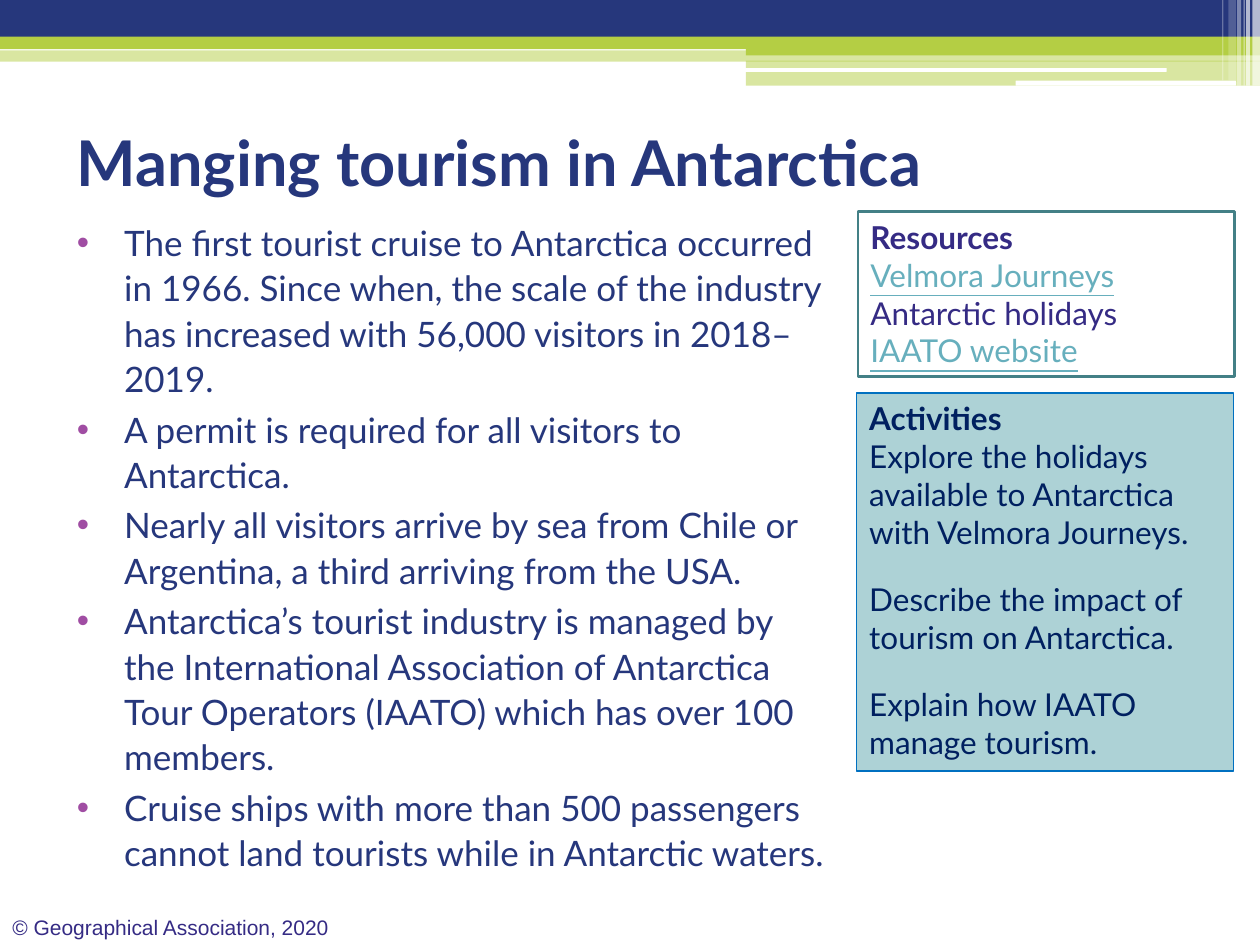
from typing import NamedTuple

from lxml import etree
from pptx import Presentation
from pptx.dml.color import RGBColor
from pptx.enum.shapes import MSO_SHAPE
from pptx.enum.text import MSO_ANCHOR, MSO_AUTO_SIZE, PP_ALIGN
from pptx.oxml.ns import qn
from pptx.util import Pt

RECT, ROUND = MSO_SHAPE.RECTANGLE, MSO_SHAPE.ROUNDED_RECTANGLE
TOP, MIDDLE = MSO_ANCHOR.TOP, MSO_ANCHOR.MIDDLE
LEFT, FIXED = PP_ALIGN.LEFT, MSO_AUTO_SIZE.NONE
NAVY, LIME, WHITE = "26377C", "B4CE44", "FFFFFF"
PURPLE, TEAL, INK, PLUM = "352B84", "67AFBD", "002060", "A04DA3"


class Box(NamedTuple):
    left: float
    top: float
    width: float
    height: float


class Bar(NamedTuple):
    box: Box
    color: str
    alpha: int = 100
    kind: int = RECT


class Run(NamedTuple):
    text: str
    color: str
    bold: bool = False
    line: bool = False


class Para(NamedTuple):
    runs: list[Run]
    gap: float = 0


class Panel(NamedTuple):
    box: Box
    fill: str | None
    edge: str
    weight: float
    paras: list[Para]


BARS = [
    Bar(Box(0, 28.8, 720, 6.5), LIME, 50),
    Bar(Box(0, 0, 720, 24.5), NAVY),
    Bar(Box(0, 20.9, 720, 7.2), LIME),
    Bar(Box(426.2, 24.5, 293.8, 7.2), LIME),
    Bar(Box(426.2, 34.6, 293.8, 14.4), LIME, 50),
    Bar(Box(425.5, 38.9, 241.2, 2.2), WHITE, kind=ROUND),
    Bar(Box(580.3, 46.1, 126, 2.9), WHITE, kind=ROUND),
]
# left, width, height, opacity of the pale strips at the right edge
STRIPS = [(715.7, 4.3, 49, 65), (712.1, 2.2, 49, 65), (710.6, 0.7, 49, 60),
          (707, 2.2, 49, 40), (702, 4.3, 46, 20), (698.4, 0.7, 46, 30)]
BARS += [Bar(Box(x, 0, w, h), WHITE, a) for x, w, h, a in STRIPS]

POINTS = [
    "The first tourist cruise to Antarctica occurred in 1966. Since when, the scale of "
    "the industry has increased with 56,000 visitors in 2018–2019.",
    "A permit is required for all visitors to Antarctica.",
    "Nearly all visitors arrive by sea from Chile or Argentina, a third arriving from the USA.",
    "Antarctica’s tourist industry is managed by the International Association of "
    "Antarctica Tour Operators (IAATO) which has over 100 members.",
    "Cruise ships with more than 500 passengers cannot land tourists while in Antarctic waters.",
]

PANELS = [
    Panel(Box(490.3, 121, 215.3, 94.3), None, "438086", 1.5, [
        Para([Run("Resources", PURPLE, bold=True)]),
        Para([Run("Velmora Journeys", TEAL, line=True), Run(" Antarctic holidays", PURPLE)]),
        Para([Run("IAATO website", TEAL, line=True)]),
    ]),
    Panel(Box(489.6, 224.6, 215.3, 216), "ADD2D6", "0070C0", 0.75, [
        Para([Run("Activities", INK, bold=True)]),
        Para([Run("Explore the holidays available to Antarctica with Velmora Journeys.", INK)]),
        Para([Run("Describe the impact of tourism on Antarctica.", INK)], 16.8),
        Para([Run("Explain how IAATO manage tourism.", INK)], 16.8),
    ]),
]


def rgb(code: str) -> RGBColor:
    return RGBColor.from_string(code)


def place(shape, box: Box) -> None:
    shape.left, shape.top, shape.width, shape.height = map(Pt, box)


def add_run(para, run: Run, size: float, face: str = "Lato") -> None:
    item = para.add_run()
    item.text = run.text
    font = item.font
    font.name, font.size, font.bold, font.underline = face, Pt(size), run.bold, run.line
    font.color.rgb = rgb(run.color)


def set_frame(frame, anchor) -> None:
    frame.word_wrap = True
    frame.auto_size = FIXED
    frame.vertical_anchor = anchor


def write(frame, paras: list[Para], size: float, face: str = "Lato") -> None:
    for num, item in enumerate(paras):
        para = frame.add_paragraph() if num else frame.paragraphs[0]
        para.alignment = LEFT
        para.space_before = Pt(item.gap)
        for run in item.runs:
            add_run(para, run, size, face)


def add_bar(slide, bar: Bar) -> None:
    shape = slide.shapes.add_shape(bar.kind, *map(Pt, bar.box))
    shape.shadow.inherit = False
    shape.line.fill.background()
    shape.fill.solid()
    shape.fill.fore_color.rgb = rgb(bar.color)
    if bar.alpha < 100:
        tint = shape.fill._xPr.find(".//" + qn("a:srgbClr"))
        etree.SubElement(tint, qn("a:alpha"), val=str(bar.alpha * 1000))


def add_panel(slide, panel: Panel) -> None:
    shape = slide.shapes.add_shape(RECT, *map(Pt, panel.box))
    shape.shadow.inherit = False
    if panel.fill:
        shape.fill.solid()
        shape.fill.fore_color.rgb = rgb(panel.fill)
    else:
        shape.fill.background()
    shape.line.color.rgb = rgb(panel.edge)
    shape.line.width = Pt(panel.weight)
    set_frame(shape.text_frame, TOP)
    write(shape.text_frame, panel.paras, 18)


def add_bullet(para) -> None:
    props = para._p.get_or_add_pPr()
    props.set("marL", str(Pt(27)))
    props.set("indent", str(Pt(-27)))
    tint = etree.SubElement(props, qn("a:buClr"))
    etree.SubElement(tint, qn("a:srgbClr"), val=PLUM)
    etree.SubElement(props, qn("a:buFont"), typeface="Arial")
    etree.SubElement(props, qn("a:buChar"), char="•")


def main() -> None:
    deck = Presentation()
    deck.slide_width, deck.slide_height = Pt(720), Pt(540)
    slide = deck.slides.add_slide(deck.slide_layouts[0])

    for bar in BARS:
        add_bar(slide, bar)

    foot = slide.shapes.add_textbox(*map(Pt, Box(0, 519, 206.6, 21.6))).text_frame
    set_frame(foot, TOP)
    write(foot, [Para([Run("© Geographical Association, 2020", PURPLE)])], 12, "Arial")

    title, body = slide.placeholders
    place(title, Box(36.7, 54.7, 612, 74.9))
    set_frame(title.text_frame, MIDDLE)
    write(title.text_frame, [Para([Run("Manging tourism in Antarctica", NAVY, bold=True)])], 36)

    place(body, Box(36.7, 121, 442, 272.2))
    set_frame(body.text_frame, TOP)
    write(body.text_frame,
          [Para([Run(text, NAVY)], 3 if num else 0) for num, text in enumerate(POINTS)], 20)
    for para in body.text_frame.paragraphs:
        add_bullet(para)
        para.line_spacing = 1.08

    for panel in PANELS:
        add_panel(slide, panel)
    deck.save("out.pptx")


if __name__ == "__main__":
    main()
